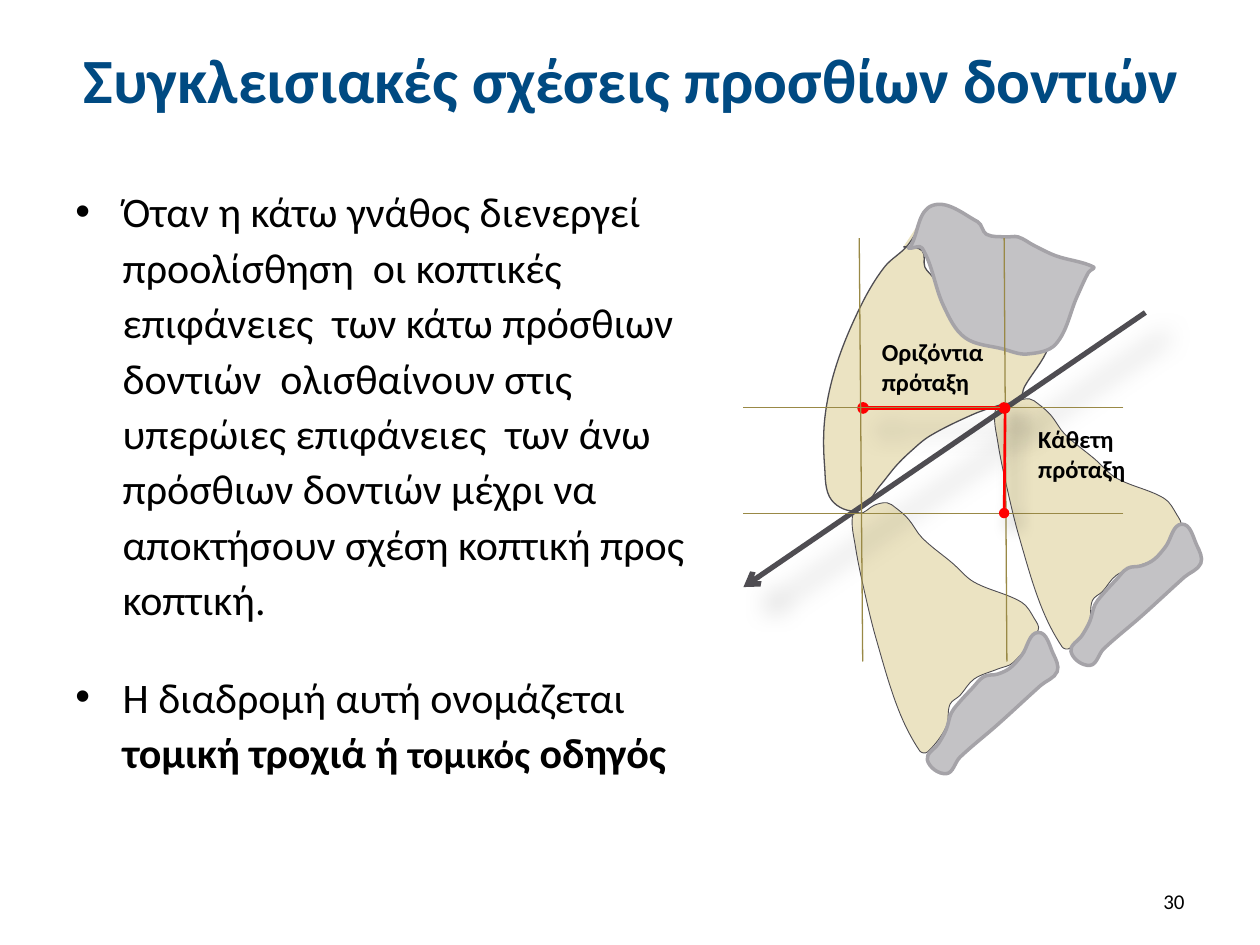
from math import hypot

from lxml import etree
from pptx import Presentation
from pptx.dml.color import RGBColor
from pptx.enum.shapes import MSO_CONNECTOR
from pptx.enum.text import MSO_ANCHOR, PP_ALIGN
from pptx.oxml import parse_xml
from pptx.oxml.ns import nsdecls, qn
from pptx.util import Pt

STRAIGHT = MSO_CONNECTOR.STRAIGHT
MIDDLE, TOP = MSO_ANCHOR.MIDDLE, MSO_ANCHOR.TOP
LEFT, CENTER, RIGHT = PP_ALIGN.LEFT, PP_ALIGN.CENTER, PP_ALIGN.RIGHT


class Theme:
    font = "Calibri"
    black, title = "000000", "004A82"
    tooth, bone, bone_edge = "EBE3C2", "C3C2C5", "A5A3A8"
    dark, guide, red = "4F4D52", "998946", "FF0000"
    title_size, body_size, small_body, label_size, number_size = 36, 24, 22, 14, 12


def add_outline(points, fill, edge, width, shift=(0, 0), closed=True):
    """Smooth curve through the points: tangents follow the neighbouring points."""
    pts = [(x + shift[0], y + shift[1]) for x, y in points]
    ring = pts + pts[:1] if closed else pts
    builder = s.shapes.build_freeform(Pt(pts[0][0]), Pt(pts[0][1]))
    builder.add_line_segments([(Pt(x), Pt(y)) for x, y in ring[1:]], close=closed)
    sp = builder.convert_to_shape()
    sp.shadow.inherit = False
    sp.fill.solid()
    sp.fill.fore_color.rgb = RGBColor.from_string(fill)
    sp.line.color.rgb = RGBColor.from_string(edge)
    sp.line.width = Pt(width)

    # Turn each straight segment into a cubic curve
    before = [pts[-1] if closed else pts[0]] + ring[:-1]
    after = ring[1:] + [pts[1] if closed else pts[-1]]
    tangents = []
    for (x0, y0), (x1, y1) in zip(before, after):
        length = hypot(x1 - x0, y1 - y0)
        tangents.append(((x1 - x0) / length, (y1 - y0) / length))
    left, top = min(x for x, y in pts), min(y for x, y in pts)
    for i, segment in enumerate(list(sp._element.iter(qn("a:lnTo")))):
        (x0, y0), (x1, y1) = ring[i], ring[i + 1]
        (u0, v0), (u1, v1) = tangents[i], tangents[i + 1]
        reach = hypot(x1 - x0, y1 - y0) / 3
        segment.tag = qn("a:cubicBezTo")
        controls = ((x0 + reach * u0, y0 + reach * v0), (x1 - reach * u1, y1 - reach * v1))
        for k, (x, y) in enumerate(controls):
            pt = etree.Element(qn("a:pt"), x=str(Pt(x - left)), y=str(Pt(y - top)))
            segment.insert(k, pt)


def add_text(box, paragraphs, size, color=Theme.black, bold=False, align=LEFT,
             anchor=TOP, wrap=True):
    """Each paragraph is a list of (text, bold, size) runs; None means the default."""
    tf = s.shapes.add_textbox(*map(Pt, box)).text_frame
    tf.word_wrap = wrap
    tf.vertical_anchor = anchor
    for i, runs in enumerate(paragraphs):
        p = tf.paragraphs[0] if i == 0 else tf.add_paragraph()
        p.alignment = align
        for text, run_bold, run_size in runs:
            r = p.add_run()
            r.text = text
            r.font.name = Theme.font
            r.font.size = Pt(run_size or size)
            r.font.bold = bold if run_bold is None else run_bold
            r.font.color.rgb = RGBColor.from_string(color)
    return tf


prs = Presentation()
prs.slide_width, prs.slide_height = Pt(720), Pt(540)
s = prs.slides.add_slide(prs.slide_layouts[6])

# Body, slide number and title
body = add_text((36, 99.8, 386.6, 391), [
    [("Όταν η κάτω γνάθος διενεργεί προολίσθηση  οι κοπτικές επιφάνειες  των κάτω "
      "πρόσθιων δοντιών  ολισθαίνουν στις υπερώιες επιφάνειες  των άνω πρόσθιων "
      "δοντιών μέχρι να αποκτήσουν σχέση κοπτική προς κοπτική.", None, None)],
    [("Η διαδρομή αυτή ονομάζεται ", None, None), ("τομική τροχιά ή ", True, None),
     ("τομικός", True, Theme.small_body), (" οδηγός", True, None)],
], Theme.body_size)
for p in body.paragraphs:
    p.line_spacing = 1.1
    p.space_before = p.space_after = Pt(12)
    pPr = p._p.get_or_add_pPr()
    pPr.set("marL", str(Pt(27)))
    pPr.set("indent", str(-Pt(27)))
    etree.SubElement(pPr, qn("a:buFont")).set("typeface", "Arial")
    etree.SubElement(pPr, qn("a:buChar")).set("char", "•")
add_text((516.2, 500.4, 167.8, 28.8), [[("30", None, None)]], Theme.number_size,
         align=RIGHT, anchor=MIDDLE)
add_text((36.8, 9.1, 648, 71.3), [[("Συγκλεισιακές σχέσεις προσθίων δοντιών", None, None)]],
         Theme.title_size, Theme.title, True, CENTER, MIDDLE)

# Outlines of teeth and bone
upper_tooth = [
    (531.4, 118.1), (519.1, 139.7), (505.4, 152.6), (491.8, 175), (478.1, 208.1),
    (471.4, 238.3), (471.2, 266.4), (475.2, 285.8), (490.3, 291.6), (502.6, 277.9),
    (511.9, 266.4), (519.8, 258.5), (531.4, 249.1), (555.8, 236.9), (570.2, 231.8),
    (582.5, 228.2), (585.4, 221), (599, 198.7), (594.7, 196.6), (576, 190.8),
    (566.6, 190.8), (553, 187.2), (545.8, 180.7), (537.8, 169.9), (533.5, 159.1),
    (528.5, 152.6), (527, 143.3), (517.7, 141.1), (516.2, 141.1)]
lower_tooth = [
    (506.9, 287.3), (499.7, 288.7), (495.4, 291.6), (493.2, 293), (487.4, 293.8),
    (488.9, 312.5), (494.6, 340.6), (501.1, 366.5), (513.4, 405.4), (525.6, 429.1),
    (529.9, 429.8), (540.7, 415.4), (542.9, 402.5), (548.6, 397.4), (556.6, 388.1),
    (570.2, 382.3), (578.9, 378.7), (593.3, 360), (591.1, 353.5), (583.9, 344.2),
    (556.6, 332.6), (544.3, 321.8), (527, 307.4), (519.1, 296.6), (511.9, 290.2)]
upper_bone = [
    (532.8, 117.4), (520.6, 140.4), (519.1, 141.8), (527, 141.8), (539.3, 175),
    (551.5, 193), (573.1, 199.4), (586.8, 202.3), (603.4, 196.6), (615.6, 169.2),
    (622.1, 155.5), (625, 152.6), (603.4, 146.2), (591.1, 140.4), (581.8, 135.4),
    (574.6, 135.4), (563.8, 133.9), (558.7, 126.7)]
lower_bone = [
    (593.3, 361.4), (583.9, 374.4), (577.4, 381.6), (570.2, 385.2), (562.3, 386.6),
    (555.8, 393.1), (547.2, 402.5), (543.6, 407.5), (540.7, 416.9), (536.4, 424.8),
    (529.9, 434.2), (540.7, 442.1), (548.6, 432.7), (570.2, 414), (594.7, 391.7),
    (604.1, 383.8), (601.9, 373.7)]
add_outline(upper_tooth, Theme.tooth, Theme.dark, 0.75, closed=False)
for shift in ((81.4, -59.4), (0, 0)):
    add_outline(lower_tooth, Theme.tooth, Theme.dark, 0.5, shift)
add_outline(upper_bone, Theme.bone, Theme.bone_edge, 2)

# Path arrow, guides and measured distances; shadow is (opacity %, blur, distance)
deep, near = (26, 15, 18), (35, 10.2, 8)
lines = [
    ((654.5, 178.6), (424.8, 335.5), Theme.dark, 3, None, "arrow", deep),
    ((573.8, 233.1), (493.2, 233.1), Theme.red, 2.25, "oval", "oval", deep),
    ((642, 293.3), (424.8, 293.3), Theme.guide, 0.75, None, None, None),
    ((491, 136.1), (493, 378), Theme.guide, 0.75, None, None, None),
    ((573.8, 136.1), (575.4, 378), Theme.guide, 0.75, None, None, None),
    ((642, 232.9), (424.8, 232.9), Theme.guide, 0.75, None, None, None),
    ((574.4, 233.3), (573.8, 293.2), Theme.red, 1.5, "oval", "oval", near)]
for start, end, color, width, head, tail, shadow in lines:
    line = s.shapes.add_connector(STRAIGHT, *map(Pt, start + end))
    line.line.color.rgb = RGBColor.from_string(color)
    line.line.width = Pt(width)
    ln = line.line._get_or_add_ln()
    for tag, kind in (("a:headEnd", head), ("a:tailEnd", tail)):
        if kind:
            etree.SubElement(ln, qn(tag)).set("type", kind)
    effects = etree.SubElement(line._element.spPr, qn("a:effectLst"))
    if shadow:
        opacity, blur, distance = shadow
        effects.append(parse_xml(
            f'<a:outerShdw {nsdecls("a")} blurRad="{Pt(blur)}" dist="{Pt(distance)}" '
            f'dir="2700000" rotWithShape="0"><a:srgbClr val="{Theme.black}">'
            f'<a:alpha val="{opacity * 1000}"/></a:srgbClr></a:outerShdw>'))

# Bone under the lower teeth
for shift in ((0, 0), (82.1, -61.9)):
    add_outline(lower_bone, Theme.bone, Theme.bone_edge, 2, shift)

# Labels of the two distances
for box, word in (((586.1, 239, 70.6, 43.9), "Κάθετη"),
                  ((496.8, 189.2, 87.1, 43.9), "Οριζόντια")):
    add_text(box, [[(word, None, None)], [("πρόταξη", None, None)]],
             Theme.label_size, bold=True, wrap=False)

prs.save("out.pptx")
